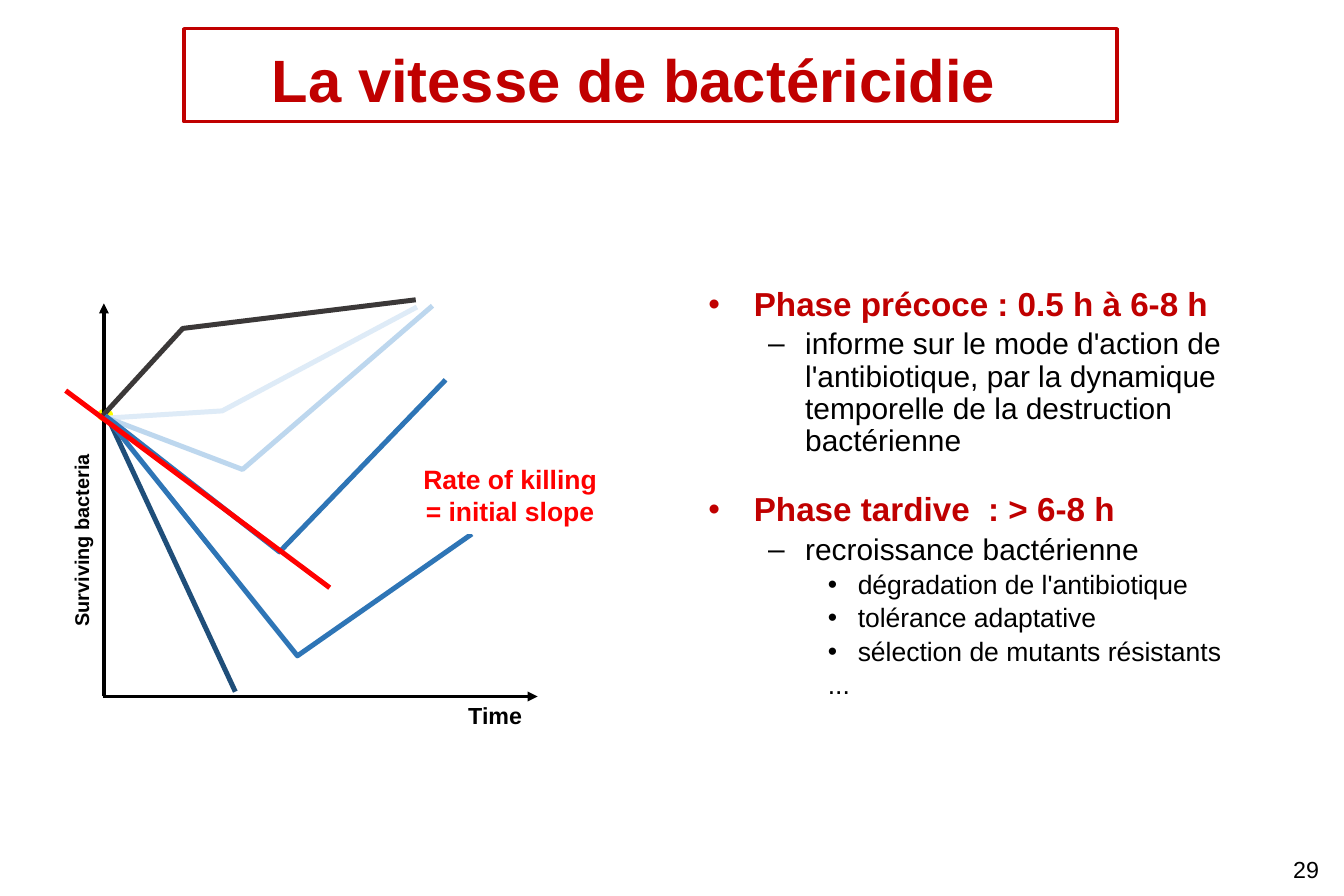
"""Build the slide on the speed of bacterial killing."""
from dataclasses import dataclass
from typing import Optional

from lxml.etree import SubElement
from pptx import Presentation
from pptx.dml.color import RGBColor
from pptx.enum.shapes import MSO_CONNECTOR as Conn, MSO_SHAPE as Shape
from pptx.enum.text import MSO_ANCHOR as Anchor, MSO_AUTO_SIZE as Auto, PP_ALIGN as Align
from pptx.oxml.ns import qn
from pptx.util import Inches, Pt


@dataclass(frozen=True)
class Theme:
    font: str = "Arial"
    black: str = "000000"
    white: str = "FFFFFF"
    accent: str = "C00000"
    red: str = "FF0000"
    yellow: str = "FAFD00"
    charcoal: str = "3B3838"
    navy: str = "1F4E79"
    blue: str = "2E75B6"
    light: str = "BDD7EE"
    pale: str = "DEEBF7"
    title: float = 36
    levels: tuple = (20, 18, 16)
    label: float = 14
    small: float = 12
    axis: float = 2
    curve: float = 3


T = Theme()


@dataclass(frozen=True)
class Line:
    points: tuple
    color: str
    width: float = T.curve
    arrow: bool = False


@dataclass(frozen=True)
class Label:
    text: str
    box: tuple
    size: float
    color: str = T.black
    bold: bool = True
    align: Align = Align.CENTER
    spacing: float = 1.0
    insets: tuple = (0.06, 0.03, 0.06, 0.03)
    rotation: float = 0
    wrap: bool = True
    fill: Optional[str] = None


@dataclass(frozen=True)
class Item:
    text: str
    level: int
    bullet: Optional[str] = "•"
    margin: float = 0.38
    hanging: float = 0.38
    gap: float = 0


STEEPEST = Line(((0.9, 3.49), (1.97, 5.79)), T.navy)
LINES = (
    Line(((0.87, 5.83), (0.87, 2.54)), T.black, T.axis, True),
    Line(((0.86, 5.83), (4.5, 5.83)), T.black, T.axis, True),
    Line(((0.86, 3.48), (1.53, 2.75), (3.48, 2.51)), T.charcoal),
    Line(((0.9, 3.5), (1.86, 3.44), (3.49, 2.57)), T.pale),
    Line(((0.9, 3.5), (2.03, 3.93), (3.62, 2.56)), T.light),
    Line(((0.88, 3.48), (2.34, 4.62), (3.73, 3.18)), T.blue),
    Line(((0.88, 3.48), (2.49, 5.49), (3.95, 4.47)), T.blue),
)
SLOPE = Line(((0.55, 3.27), (2.76, 4.92)), T.red)

LABELS = (
    Label("29", (8.23, 7.11, 2.91, 0.35), T.label, bold=False, align=Align.RIGHT,
          insets=(0.1, 0.05, 0.1, 0.05)),
    Label("Surviving bacteria", (-0.4, 4.03, 2.19, 0.36), T.small, align=Align.LEFT,
          spacing=1.17, rotation=270),
    Label("Time", (3.75, 5.79, 0.79, 0.4), T.label, spacing=1.2, wrap=False),
    Label("Rate of killing\n= initial slope", (3.28, 3.83, 1.98, 0.64), T.levels[2], T.red,
          insets=(0.1, 0.05, 0.1, 0.05), fill=T.white),
)

ITEMS = (
    Item("Phase précoce : 0.5 h à 6-8 h", 0),
    Item("informe sur le mode d'action de l'antibiotique, par la dynamique temporelle "
         "de la destruction bactérienne", 1, "–", 0.81, 0.31),
    Item("Phase tardive  : > 6-8 h", 0, gap=17.5),
    Item("recroissance bactérienne", 1, "–", 0.81, 0.31),
    Item("dégradation de l'antibiotique", 2, "•", 1.25, 0.25),
    Item("tolérance adaptative", 2, "•", 1.25, 0.25),
    Item("sélection de mutants résistants", 2, "•", 1.25, 0.25),
    Item("...", 2, None, 1, 0),
)


def rgb(color: str) -> RGBColor:
    return RGBColor.from_string(color)


def place(sp, box: tuple) -> None:
    sp.left, sp.top, sp.width, sp.height = map(Inches, box)


def set_frame(tf, insets: tuple, anchor=Anchor.TOP, wrap: bool = True) -> None:
    tf.auto_size, tf.word_wrap, tf.vertical_anchor = Auto.NONE, wrap, anchor
    tf.margin_left, tf.margin_top, tf.margin_right, tf.margin_bottom = map(Inches, insets)


def write(tf, text: str, *, size: float, color: str = T.black, bold: bool = False,
          align=Align.LEFT, spacing: float = 1.0, before: float = 0, level: int = 0):
    p = tf.paragraphs[0]
    if p.runs:
        p = tf.add_paragraph()
    p.alignment, p.line_spacing, p.level = align, spacing, level
    p.space_before = Pt(before)
    r = p.add_run()
    r.text = text
    r.font.name, r.font.size, r.font.bold = T.font, Pt(size), bold
    r.font.color.rgb = rgb(color)
    return p


def add_item(tf, item: Item) -> None:
    size = T.levels[item.level]
    head = item.level == 0
    p = write(tf, item.text, size=size, color=T.accent if head else T.black, bold=head,
              spacing=0.9, before=0.18 * size + item.gap, level=item.level)
    ppr = p._p.get_or_add_pPr()
    ppr.set("marL", str(Inches(item.margin)))
    ppr.set("indent", str(-Inches(item.hanging)))
    if item.bullet:
        SubElement(ppr, qn("a:buFont"), typeface=T.font)
        SubElement(ppr, qn("a:buChar"), char=item.bullet)
    else:
        SubElement(ppr, qn("a:buNone"))


def add_line(shapes, line: Line) -> None:
    start, *rest = [tuple(map(Inches, point)) for point in line.points]
    if len(rest) == 1:
        sp = shapes.add_connector(Conn.STRAIGHT, *start, *rest[0])
        SubElement(sp.element.spPr, qn("a:effectLst"))
    else:
        builder = shapes.build_freeform(*start)
        builder.add_line_segments(rest, close=False)
        sp = builder.convert_to_shape()
        sp.fill.background()
        sp.shadow.inherit = False
    sp.line.color.rgb, sp.line.width = rgb(line.color), Pt(line.width)
    if line.arrow:
        SubElement(sp.element.spPr.find(qn("a:ln")), qn("a:tailEnd"), type="triangle")


def add_label(shapes, label: Label) -> None:
    sp = shapes.add_textbox(*map(Inches, label.box))
    sp.rotation = label.rotation
    if label.fill:
        sp.fill.solid()
        sp.fill.fore_color.rgb = rgb(label.fill)
    set_frame(sp.text_frame, label.insets, wrap=label.wrap)
    for text in label.text.split("\n"):
        write(sp.text_frame, text, size=label.size, color=label.color, bold=label.bold,
              align=label.align, spacing=label.spacing)


def add_origin(shapes) -> None:
    sp = shapes.add_shape(Shape.OVAL, *map(Inches, (0.84, 3.45, 0.08, 0.05)))
    sp.shadow.inherit = False
    sp.fill.solid()
    sp.fill.fore_color.rgb = sp.line.color.rgb = rgb(T.yellow)
    sp.line.width = Pt(4)


def main() -> None:
    prs = Presentation()
    prs.slide_width, prs.slide_height = Inches(11.25), Inches(7.5)
    s = prs.slides.add_slide(prs.slide_layouts[1])
    title, body = s.shapes.title, s.placeholders[1]
    place(title, (1.54, 0.24, 7.81, 0.78))
    title.line.color.rgb, title.line.width = rgb(T.accent), Pt(2)
    set_frame(title.text_frame, (0.12, 0.08, 0.4, 0.08), Anchor.MIDDLE)
    write(title.text_frame, "La vitesse de bactéricidie", size=T.title, color=T.accent,
          bold=True, align=Align.CENTER, spacing=1.1)
    place(body, (5.83, 2.36, 5.06, 4.22))
    set_frame(body.text_frame, (0.1, 0.05, 0.1, 0.05))
    for item in ITEMS:
        add_item(body.text_frame, item)
    add_line(s.shapes, STEEPEST)
    add_origin(s.shapes)
    for line in LINES:
        add_line(s.shapes, line)
    for label in LABELS:
        add_label(s.shapes, label)
    add_line(s.shapes, SLOPE)
    prs.save("out.pptx")


if __name__ == "__main__":
    main()
